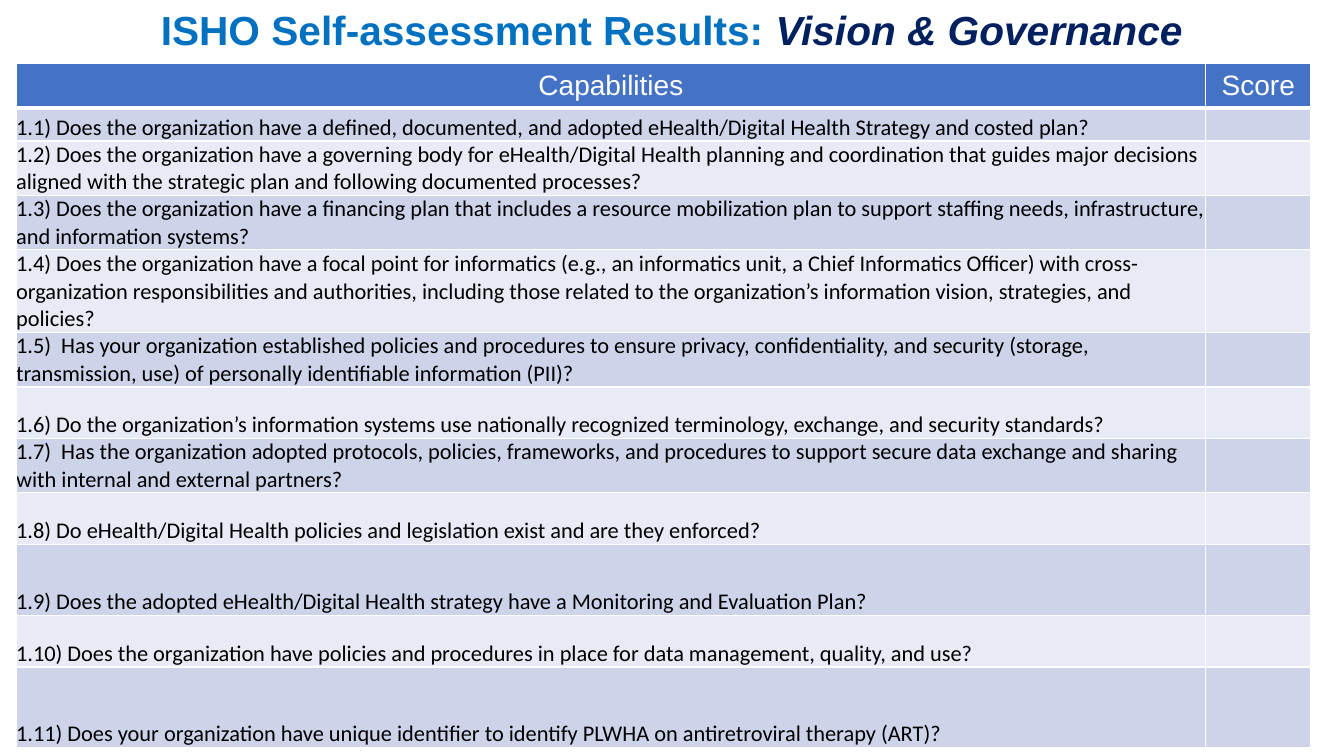
import pptx
import pptx.util
import pptx.dml.color
import pptx.enum.text
import pptx.oxml.ns
import lxml.etree

WIDTH, HEIGHT = 13.33, 7.5
COLORS = {
    "title": "0070C0", "topic": "002060", "header": "4472C4",
    "odd": "CDD4EA", "even": "E8EBF5", "white": "FFFFFF", "text": "000000",
}
COLUMNS = [11.8, 1.04]
HEADINGS = ["Capabilities", "Score"]
HEADER_HEIGHT = 0.44
QUESTIONS = [
    (0.33, "1.1) Does the organization have a defined, documented, and adopted eHealth/Digital Health Strategy and costed plan?"),
    (0.54, "1.2) Does the organization have a governing body for eHealth/Digital Health planning and coordination that guides major decisions aligned with the strategic plan and following documented processes?"),
    (0.54, "1.3) Does the organization have a financing plan that includes a resource mobilization plan to support staffing needs, infrastructure, and information systems?"),
    (0.82, "1.4) Does the organization have a focal point for informatics (e.g., an informatics unit, a Chief Informatics Officer) with cross-organization responsibilities and authorities, including those related to the organization’s information vision, strategies, and policies?"),
    (0.54, "1.5)  Has your organization established policies and procedures to ensure privacy, confidentiality, and security (storage, transmission, use) of personally identifiable information (PII)?"),
    (0.51, "1.6) Do the organization’s information systems use nationally recognized terminology, exchange, and security standards?"),
    (0.54, "1.7)  Has the organization adopted protocols, policies, frameworks, and procedures to support secure data exchange and sharing with internal and external partners?"),
    (0.51, "1.8) Do eHealth/Digital Health policies and legislation exist and are they enforced?"),
    (0.71, "1.9) Does the adopted eHealth/Digital Health strategy have a Monitoring and Evaluation Plan?"),
    (0.51, "1.10) Does the organization have policies and procedures in place for data management, quality, and use?"),
    (0.8, "1.11) Does your organization have unique identifier to identify PLWHA on antiretroviral therapy (ART)?"),
]


def color(name):
    return pptx.dml.color.RGBColor.from_string(COLORS[name])


def format_span(span, size, face, tint, bold=False, italic=False):
    span.font.size = pptx.util.Pt(size)
    span.font.name = face
    span.font.color.rgb = color(tint)
    span.font.bold = bold
    span.font.italic = italic


def add_title(page, left, top, width, height):
    box = page.shapes.add_textbox(*map(pptx.util.Inches, (left, top, width, height)))
    frame = box.text_frame
    frame.word_wrap = True
    frame.vertical_anchor = pptx.enum.text.MSO_ANCHOR.MIDDLE
    para = frame.paragraphs[0]
    para.alignment = pptx.enum.text.PP_ALIGN.CENTER
    for words, tint, italic in [
        ("ISHO Self-assessment Results: ", "title", False),
        ("Vision & Governance", "topic", True),
    ]:
        span = para.add_run()
        span.text = words
        format_span(span, 29, "Arial", tint, True, italic)


def set_borders(cell, **widths):
    properties = cell._tc.get_or_add_tcPr()
    for position, side in enumerate(("L", "R", "T", "B")):
        line = lxml.etree.Element(pptx.oxml.ns.qn("a:ln" + side))
        line.set("w", str(pptx.util.Pt(widths.get(side, 1))))
        fill = lxml.etree.SubElement(line, pptx.oxml.ns.qn("a:solidFill"))
        lxml.etree.SubElement(fill, pptx.oxml.ns.qn("a:srgbClr"), val=COLORS["white"])
        properties.insert(position, line)


def paint_cell(cell, fill, **borders):
    cell.fill.solid()
    cell.fill.fore_color.rgb = color(fill)
    set_borders(cell, **borders)


def fill_header(cell, heading):
    cell.text_frame.text = heading
    cell.vertical_anchor = pptx.enum.text.MSO_ANCHOR.MIDDLE
    para = cell.text_frame.paragraphs[0]
    para.alignment = pptx.enum.text.PP_ALIGN.CENTER
    format_span(para.runs[0], 20, "Arial", "white")
    paint_cell(cell, "header", B=3)


def fill_body(cell, words, row):
    cell.margin_left = cell.margin_right = cell.margin_top = cell.margin_bottom = 0
    cell.vertical_anchor = pptx.enum.text.MSO_ANCHOR.BOTTOM
    cell.text_frame.text = words
    for span in cell.text_frame.paragraphs[0].runs:
        format_span(span, 16, "Calibri", "text")
    paint_cell(cell, "odd" if row % 2 else "even", T=3 if row == 1 else 1)


def add_scores(page, left, top):
    heights = [HEADER_HEIGHT] + [height for height, question in QUESTIONS]
    bounds = map(pptx.util.Inches, (left, top, sum(COLUMNS), sum(heights)))
    table = page.shapes.add_table(len(heights), len(COLUMNS), *bounds).table
    for column, width in zip(table.columns, COLUMNS):
        column.width = pptx.util.Inches(width)
    for row, height in zip(table.rows, heights):
        row.height = pptx.util.Inches(height)
    for column, heading in enumerate(HEADINGS):
        fill_header(table.cell(0, column), heading)
    for row, (height, question) in enumerate(QUESTIONS, 1):
        fill_body(table.cell(row, 0), question, row)
        fill_body(table.cell(row, 1), "", row)


def main():
    deck = pptx.Presentation()
    deck.slide_width = pptx.util.Inches(WIDTH)
    deck.slide_height = pptx.util.Inches(HEIGHT)
    page = deck.slides.add_slide(deck.slide_layouts[6])
    add_title(page, 0, -0.43, WIDTH, 1.45)
    add_scores(page, 0.16, 0.63)
    deck.save("out.pptx")


if __name__ == "__main__":
    main()
